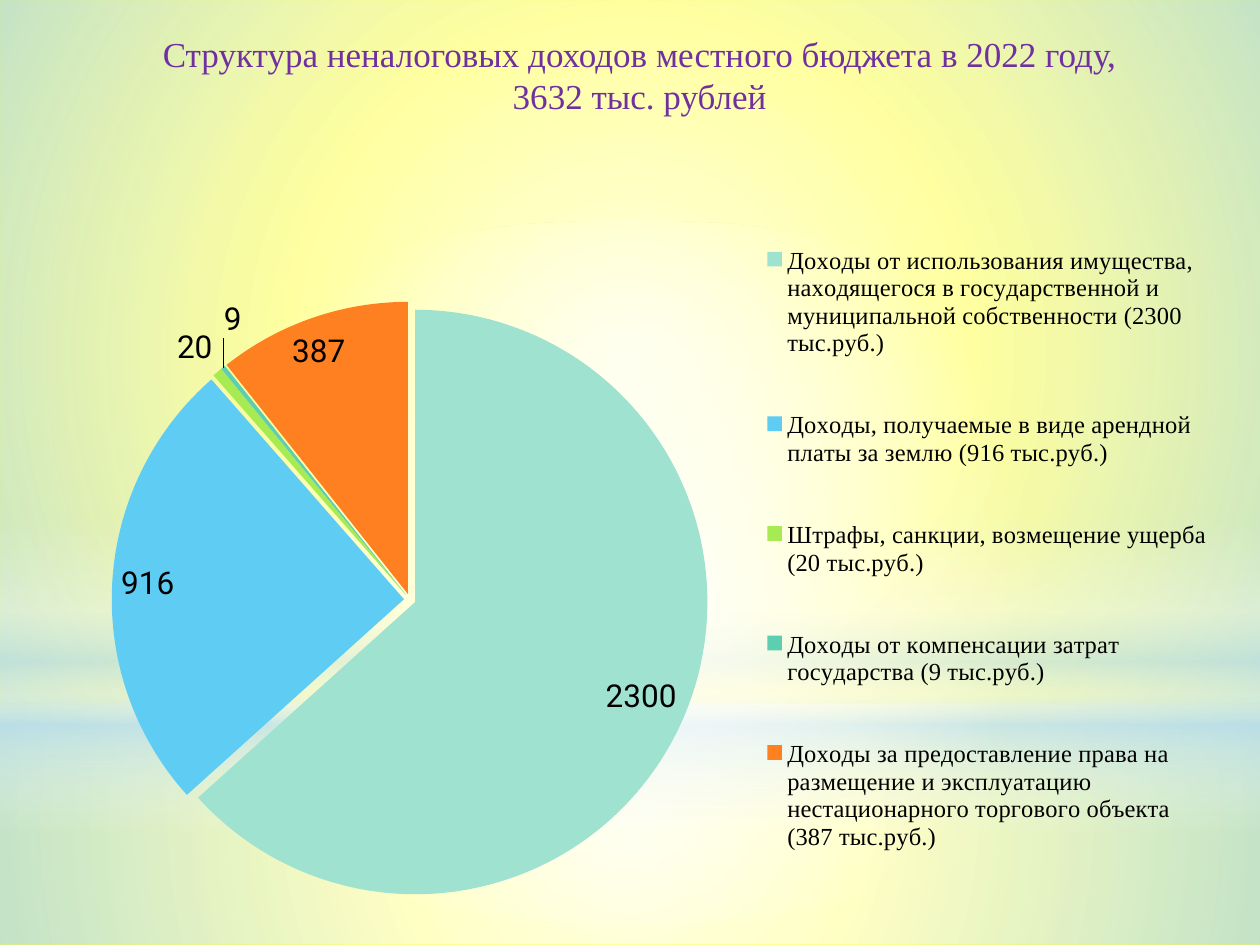
from pptx import Presentation
from pptx.chart.data import CategoryChartData
from pptx.dml.color import RGBColor
from pptx.enum.chart import XL_CHART_TYPE, XL_LABEL_POSITION, XL_LEGEND_POSITION
from pptx.enum.shapes import MSO_SHAPE
from pptx.enum.text import MSO_ANCHOR, MSO_AUTO_SIZE, PP_ALIGN
from pptx.oxml import parse_xml
from pptx.oxml.ns import nsdecls, qn
from pptx.util import Pt

RECTANGLE, OVAL = MSO_SHAPE.RECTANGLE, MSO_SHAPE.OVAL
PIE = XL_CHART_TYPE.PIE
LEGEND_RIGHT = XL_LEGEND_POSITION.RIGHT
BEST_FIT = XL_LABEL_POSITION.BEST_FIT
CENTER = PP_ALIGN.CENTER
TOP = MSO_ANCHOR.TOP
FIT_SHAPE = MSO_AUTO_SIZE.SHAPE_TO_FIT_TEXT

YELLOW = RGBColor(0xFF, 0xFF, 0x00)
WHITE = RGBColor(0xFF, 0xFF, 0xFF)
SKY = RGBColor(0xB4, 0xDC, 0xFA)
PURPLE = RGBColor(0x70, 0x30, 0xA0)
BLACK = RGBColor(0x00, 0x00, 0x00)
MINT = RGBColor(0x9E, 0xE2, 0xCF)
BLUE = RGBColor(0x5E, 0xCC, 0xF3)
LIME = RGBColor(0xA7, 0xEA, 0x52)
TEAL = RGBColor(0x5D, 0xCE, 0xAF)
ORANGE = RGBColor(0xFF, 0x80, 0x21)

SERIF = "Times New Roman"
SANS = "Roboto"

RADIAL = ('<a:path path="circle"><a:fillToRect l="50000" t="50000" '
          'r="50000" b="50000"/></a:path>')
VERTICAL = '<a:lin ang="5400000" scaled="0"/>'


def set_gradient(shape, stops, direction):
    """Fill with stops of (position %, colour, opacity %)."""
    stop_xml = "".join(
        f'<a:gs pos="{pos * 1000}"><a:srgbClr val="{color}">'
        f'<a:alpha val="{opacity * 1000}"/></a:srgbClr></a:gs>'
        for pos, color, opacity in stops)
    gradient = parse_xml(f'<a:gradFill {nsdecls("a")} rotWithShape="1">'
                         f'<a:gsLst>{stop_xml}</a:gsLst>{direction}</a:gradFill>')
    shape._element.spPr.find(qn("a:prstGeom")).addnext(gradient)


def set_layout(parent, x, y, w, h, target=""):
    """Place a chart part by fractions of the chart's size."""
    old = parent.find(qn("c:layout"))
    if old is not None:
        parent.remove(old)
    layout = parse_xml(
        f'<c:layout {nsdecls("c")}><c:manualLayout>{target}'
        '<c:xMode val="edge"/><c:yMode val="edge"/>'
        f'<c:x val="{x}"/><c:y val="{y}"/><c:w val="{w}"/><c:h val="{h}"/>'
        '</c:manualLayout></c:layout>')
    position = parent.find(qn("c:legendPos"))
    if position is None:
        parent.insert(0, layout)
    else:
        position.addnext(layout)


prs = Presentation()
prs.slide_width, prs.slide_height = Pt(720), Pt(540)
slide = prs.slides.add_slide(prs.slide_layouts[5])

# Background: yellow under translucent glows
slide.background.fill.solid()
slide.background.fill.fore_color.rgb = YELLOW

HORIZON = 402
glows = [
    (RECTANGLE, HORIZON, 540 - HORIZON, RADIAL,
     [(0, WHITE, 91), (37, WHITE, 76), (100, SKY, 79)]),
    (RECTANGLE, 0, HORIZON, RADIAL,
     [(0, WHITE, 89), (48, WHITE, 62), (100, SKY, 79)]),
    (RECTANGLE, 297, 180, VERTICAL,
     [(0, WHITE, 0), (29, WHITE, 30), (45, SKY, 40),
      (55, WHITE, 26), (65, SKY, 60), (100, WHITE, 0)]),
    (OVAL, 126, HORIZON, RADIAL, [(0, WHITE, 100), (56, WHITE, 0)]),
]
for outline, top, height, direction, stops in glows:
    glow = slide.shapes.add_shape(outline, 0, Pt(top), Pt(720), Pt(height))
    glow.shadow.inherit = False
    glow.line.fill.background()
    set_gradient(glow, stops, direction)

# Pie of non-tax revenues
revenues = [
    ("Доходы от использования имущества, находящегося в государственной "
     "и муниципальной собственности (2300 тыс.руб.)", 2300, MINT),
    ("Доходы, получаемые в виде арендной платы за землю (916 тыс.руб.)", 916, BLUE),
    ("Штрафы, санкции, возмещение ущерба (20 тыс.руб.)", 20, LIME),
    ("Доходы от компенсации затрат государства (9 тыс.руб.)", 9, TEAL),
    ("Доходы за предоставление права на размещение и эксплуатацию "
     "нестационарного торгового объекта (387 тыс.руб.)", 387, ORANGE),
]
revenue_data = CategoryChartData()
revenue_data.categories = [name for name, _, _ in revenues]
revenue_data.add_series("Series 1", [amount for _, amount, _ in revenues])
chart = slide.shapes.add_chart(
    PIE, Pt(20), Pt(110), Pt(680), Pt(415.5), revenue_data).chart
chart.has_title = False
chart.font.size = Pt(18)
chart.font.name = SANS
chart.font.color.rgb = BLACK

chart.plots[0].vary_by_categories = True
series = chart.plots[0].series[0]
for index, (_, _, color) in enumerate(revenues):
    fill = series.points[index].format.fill
    fill.solid()
    fill.fore_color.rgb = color
series._element.find(qn("c:dPt")).addprevious(
    parse_xml(f'<c:explosion {nsdecls("c")} val="2"/>'))

labels = series.data_labels
labels.show_value = True
labels.position = BEST_FIT
labels.font.size = Pt(18)
labels.font.name = SANS
labels.font.color.rgb = BLACK

chart.has_legend = True
legend = chart.legend
legend.position = LEGEND_RIGHT
legend.include_in_layout = False
legend.font.size = Pt(14)
legend.font.name = SERIF
legend.font.color.rgb = BLACK
set_layout(legend._element, 0.61, 0, 0.38, 0.98)
set_layout(chart._chartSpace.chart.plotArea, 0.02, 0.15, 0.59, 0.82,
           '<c:layoutTarget val="inner"/>')

# Title, in front of the glows
title = slide.shapes.title
slide.shapes._spTree.append(title._element)
title.left, title.top, title.width, title.height = Pt(31), Pt(15), Pt(669), Pt(55.5)
frame = title.text_frame
frame.word_wrap = True
frame.auto_size = FIT_SHAPE
frame.vertical_anchor = TOP
heading = frame.paragraphs[0]
heading.alignment = CENTER
for number, line in enumerate(
        ["Структура неналоговых доходов местного бюджета в 2022 году,",
         "3632 тыс. рублей"]):
    if number:
        heading.add_line_break()
    run = heading.add_run()
    run.text = line
    run.font.size = Pt(20)
    run.font.name = SERIF
    run.font.color.rgb = PURPLE

prs.save("out.pptx")
